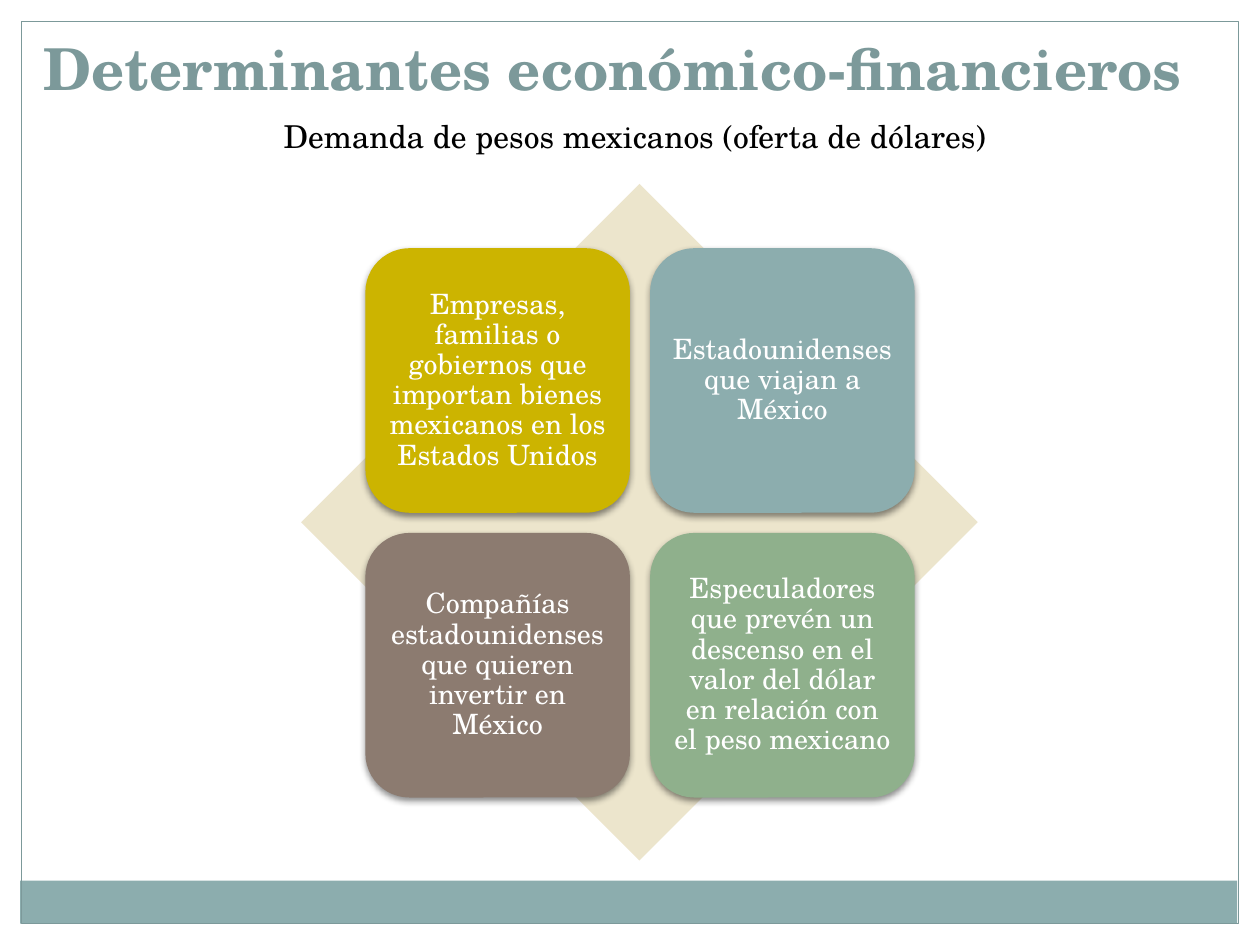
"""Build the slide on the demand for Mexican pesos."""
from dataclasses import dataclass

from lxml import etree
from pptx import Presentation, util as u
from pptx.dml.color import RGBColor
from pptx.enum import shapes, text
from pptx.oxml import ns

FONT = "TeX Gyre Schola"
WHITE = RGBColor(0xFF, 0xFF, 0xFF)
BLACK = RGBColor(0x00, 0x00, 0x00)
TEAL = RGBColor(0x7C, 0x99, 0x9A)
AQUA = RGBColor(0x8C, 0xAD, 0xAE)
SAND = RGBColor(0xEC, 0xE5, 0xCC)
MUSTARD = RGBColor(0xCC, 0xB4, 0x00)
BROWN = RGBColor(0x8C, 0x7B, 0x70)
GREEN = RGBColor(0x8F, 0xB0, 0x8C)

CARD_LEFT, CARD_TOP, CARD_SIZE, CARD_STEP = 2.9, 1.97, 2.1, 2.26


@dataclass
class Card:
    label: str
    fill: RGBColor


CARDS = [
    Card("Empresas, familias o gobiernos que importan bienes mexicanos "
         "en los Estados Unidos", MUSTARD),
    Card("Estadounidenses que viajan a México", AQUA),
    Card("Compañías estadounidenses que quieren invertir en México", BROWN),
    Card("Especuladores que prevén un descenso en el valor del dólar "
         "en relación con el peso mexicano", GREEN),
]


def place(sp, left: float, top: float, width: float, height: float) -> None:
    sp.left, sp.top = u.Inches(left), u.Inches(top)
    sp.width, sp.height = u.Inches(width), u.Inches(height)


def write(sp, label: str, size: float, color: RGBColor, anchor, bold: bool = False):
    tf = sp.text_frame
    tf.word_wrap = True
    tf.auto_size = text.MSO_AUTO_SIZE.NONE
    tf.vertical_anchor = anchor
    p = tf.paragraphs[0]
    p.text = label
    p.alignment = text.PP_ALIGN.CENTER
    p.font.name, p.font.size, p.font.bold = FONT, u.Pt(size), bold
    p.font.color.rgb = color
    return tf


def add_block(s, kind, left: float, top: float, width: float, height: float,
              fill: RGBColor):
    sp = s.shapes.add_shape(kind, u.Inches(left), u.Inches(top),
                            u.Inches(width), u.Inches(height))
    sp.shadow.inherit = False
    sp.fill.solid()
    sp.fill.fore_color.rgb = fill
    sp.line.fill.background()
    return sp


def add_shadow(sp) -> None:
    effects = sp._element.spPr.find(ns.qn("a:effectLst"))
    shadow = etree.SubElement(effects, ns.qn("a:outerShdw"), blurRad=str(u.Pt(4)),
                              dist=str(u.Pt(2)), dir="5400000", rotWithShape="0")
    color = etree.SubElement(shadow, ns.qn("a:srgbClr"), val=str(BLACK))
    etree.SubElement(color, ns.qn("a:alpha"), val="45000")


def add_card(s, card: Card, row: int, col: int) -> None:
    sp = add_block(s, shapes.MSO_SHAPE.ROUNDED_RECTANGLE,
                   CARD_LEFT + col * CARD_STEP, CARD_TOP + row * CARD_STEP,
                   CARD_SIZE, CARD_SIZE, card.fill)
    add_shadow(sp)
    tf = write(sp, card.label, 16, WHITE, text.MSO_ANCHOR.MIDDLE)
    tf.margin_left = tf.margin_right = u.Inches(0.07)
    tf.margin_top = tf.margin_bottom = u.Inches(0.07)
    tf.paragraphs[0].line_spacing = 0.9


def main() -> None:
    prs = Presentation()
    prs.slide_width, prs.slide_height = u.Inches(10), u.Inches(7.5)
    s = prs.slides.add_slide(prs.slide_layouts[5])

    add_block(s, shapes.MSO_SHAPE.RECTANGLE, 0.16, 6.99, 9.66, 0.34, AQUA)
    frame = add_block(s, shapes.MSO_SHAPE.RECTANGLE, 0.17, 0.17, 9.66, 7.16, WHITE)
    frame.fill.background()
    frame.line.color.rgb = TEAL
    frame.line.width = u.Pt(0.75)

    title = s.shapes.title
    place(title, 0.2, 0.03, 9.33, 0.83)
    write(title, "Determinantes económico-financieros", 33, TEAL,
          text.MSO_ANCHOR.BOTTOM, bold=True)

    subtitle = s.shapes.add_textbox(0, 0, 0, 0)
    place(subtitle, 0.67, 0.88, 8.74, 0.4)
    write(subtitle, "Demanda de pesos mexicanos (oferta de dólares)", 18, BLACK,
          text.MSO_ANCHOR.TOP)

    add_block(s, shapes.MSO_SHAPE.DIAMOND, 2.39, 1.46, 5.37, 5.37, SAND)
    for i, card in enumerate(CARDS):
        add_card(s, card, *divmod(i, 2))

    prs.save("out.pptx")


if __name__ == "__main__":
    main()
